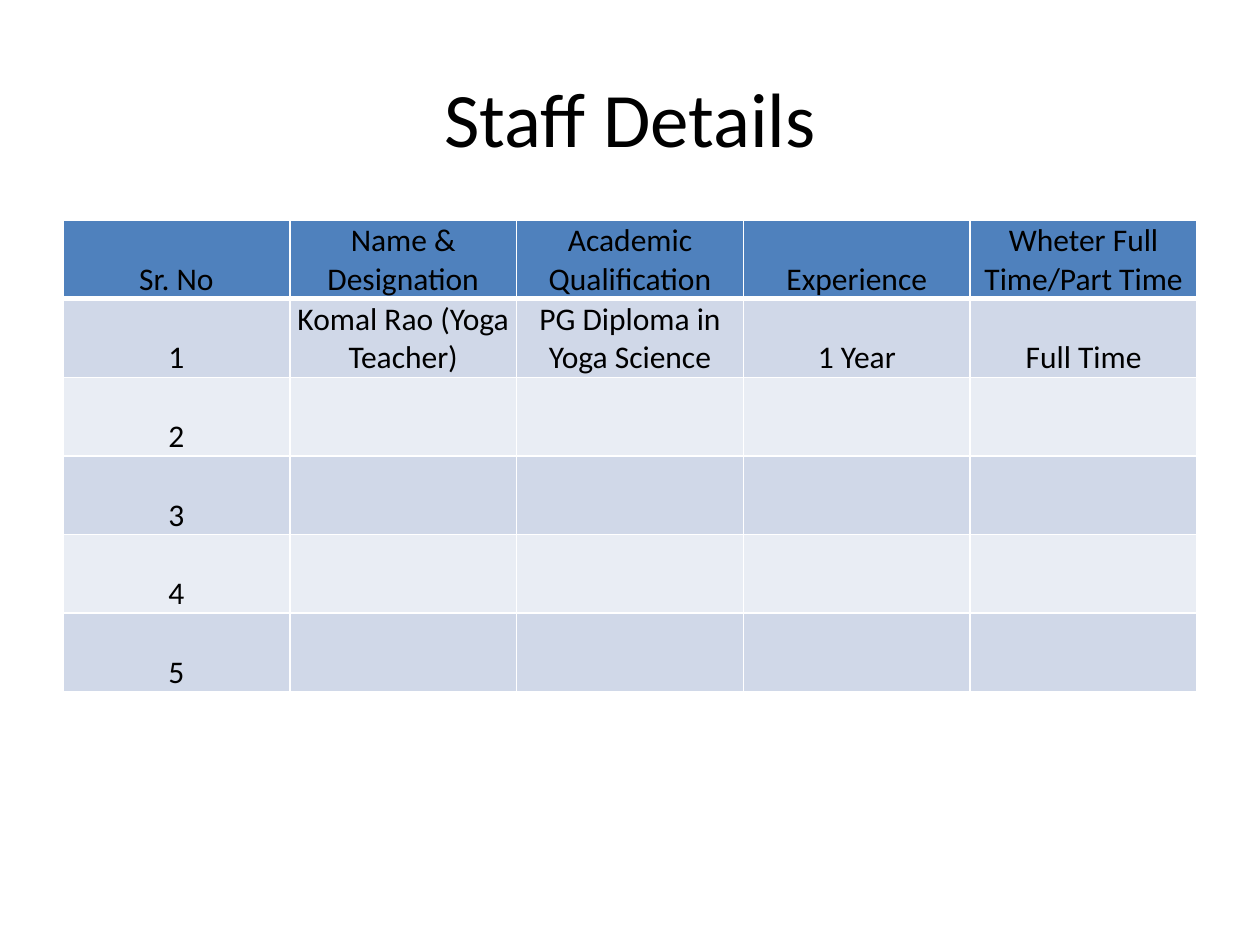
from lxml import etree
from pptx import Presentation
from pptx import util as u
from pptx.dml.color import RGBColor
from pptx.enum import text
from pptx.oxml.ns import qn

FONT = "Calibri"
BLACK, WHITE = "000000", "FFFFFF"
HEADER_FILL, BAND_FILLS = "4F81BD", ("D0D8E8", "E9EDF4")
HEADERS = ["Sr. No", "Name & Designation", "Academic Qualification",
           "Experience", "Wheter Full Time/Part Time"]
STAFF = [
    ["1", "Komal Rao (Yoga Teacher)", "PG Diploma in Yoga Science", "1 Year", "Full Time"],
    *([str(number), "", "", "", ""] for number in range(2, 6)),
]


def px(length):
    return u.Emu(round(length * 914400 / 126))


def color(value):
    return RGBColor.from_string(value)


def write(frame, words, size):
    """Put one centred run into a text frame."""
    paragraph = frame.paragraphs[0]
    paragraph.alignment = text.PP_ALIGN.CENTER
    run = paragraph.add_run()
    run.text = words
    run.font.name = FONT
    run.font.size = u.Pt(size)
    run.font.bold = False
    run.font.color.rgb = color(BLACK)


def add_title(slide, words):
    shape = slide.shapes.add_textbox(px(63), px(38), px(1134), px(157))
    frame = shape.text_frame
    frame.word_wrap = True
    frame.vertical_anchor = text.MSO_ANCHOR.MIDDLE
    write(frame, words, 44)


def set_borders(cell, top, bottom):
    """Draw white cell borders; top and bottom are widths in points."""
    properties = cell._tc.get_or_add_tcPr()
    for side, width in (("L", 1), ("R", 1), ("T", top), ("B", bottom)):
        line = etree.SubElement(properties, qn(f"a:ln{side}"), w=str(u.Pt(width)))
        fill = etree.SubElement(line, qn("a:solidFill"))
        etree.SubElement(fill, qn("a:srgbClr"), val=WHITE)


def style_cell(cell, words, fill, top, bottom):
    set_borders(cell, top, bottom)
    cell.fill.solid()
    cell.fill.fore_color.rgb = color(fill)
    if words:
        cell.vertical_anchor = text.MSO_ANCHOR.BOTTOM
        cell.margin_left = cell.margin_right = cell.margin_top = px(1)
        cell.margin_bottom = 0
        write(cell.text_frame, words, 18)


def add_staff_table(slide):
    rows = [HEADERS, *STAFF]
    table = slide.shapes.add_table(len(rows), len(HEADERS), px(63), px(220),
                                   px(1134), px(472)).table
    table.first_row = table.horz_banding = False
    for row_index, row in enumerate(rows):
        fill = BAND_FILLS[(row_index - 1) % 2] if row_index else HEADER_FILL
        top = 3 if row_index == 1 else 1
        bottom = 3 if row_index == 0 else 1
        for column_index, words in enumerate(row):
            style_cell(table.cell(row_index, column_index), words, fill, top, bottom)


def main():
    presentation = Presentation()
    presentation.slide_width, presentation.slide_height = px(1260), px(945)
    slide = presentation.slides.add_slide(presentation.slide_layouts[6])
    add_title(slide, "Staff Details")
    add_staff_table(slide)
    presentation.save("out.pptx")


if __name__ == "__main__":
    main()
